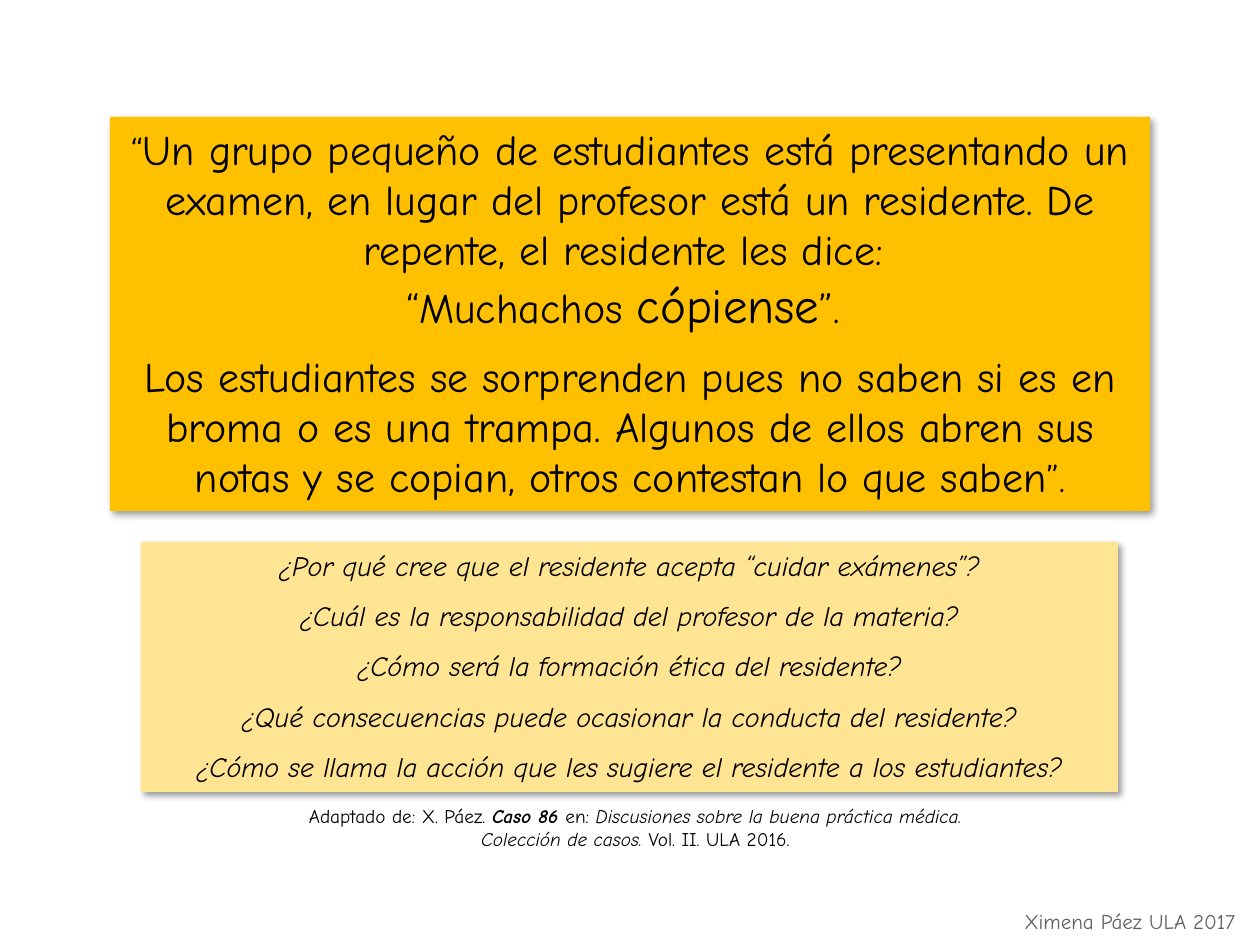
from lxml import etree
from pptx import Presentation
from pptx.dml.color import RGBColor
from pptx.enum.shapes import MSO_SHAPE
from pptx.enum.text import MSO_ANCHOR, MSO_AUTO_SIZE, PP_ALIGN
from pptx.oxml.ns import qn
from pptx.util import Emu, Pt

PX = 914400 // 126
RECT = MSO_SHAPE.RECTANGLE
CENTER = PP_ALIGN.CENTER
TOP = MSO_ANCHOR.TOP
GROW = MSO_AUTO_SIZE.SHAPE_TO_FIT_TEXT

BLACK = RGBColor(0x00, 0x00, 0x00)
GRAY = RGBColor(0x5F, 0x5F, 0x5F)
AMBER = RGBColor(0xFF, 0xC0, 0x00)
CREAM = RGBColor(0xFF, 0xE5, 0x93)

FONT = "Comic Neue"
GAP = 9.6  # points between separated paragraphs


class SlideBuilder:
    def __init__(self, slide):
        self.slide = slide

    def px(self, *lengths):
        return [Emu(n * PX) for n in lengths]

    def shadow(self, sp):
        sp.shadow.inherit = False
        effects = sp._element.spPr.find(qn("a:effectLst"))
        outer = etree.SubElement(effects, qn("a:outerShdw"), blurRad=str(Pt(4)),
                                 dist=str(Pt(3)), dir="2700000", algn="tl", rotWithShape="0")
        color = etree.SubElement(outer, qn("a:srgbClr"), val=str(BLACK))
        etree.SubElement(color, qn("a:alpha"), val="40000")

    def fill_text(self, sp, paragraphs, size, color=BLACK, wrap=True):
        """Each paragraph is (space before, [(text, format overrides), ...])."""
        tf = sp.text_frame
        tf.word_wrap = wrap
        tf.auto_size = GROW
        tf.vertical_anchor = TOP
        for i, (before, runs) in enumerate(paragraphs):
            p = tf.paragraphs[0] if i == 0 else tf.add_paragraph()
            p.alignment = CENTER
            p.space_before = Pt(before)
            for text, extra in runs:
                r = p.add_run()
                r.text = text
                r.font.color.rgb = color
                for key, value in {"name": FONT, "size": Pt(size), **extra}.items():
                    setattr(r.font, key, value)

    def panel(self, box, fill, paragraphs, size):
        sp = self.slide.shapes.add_shape(RECT, *self.px(*box))
        sp.fill.solid()
        sp.fill.fore_color.rgb = fill
        sp.line.fill.background()
        self.shadow(sp)
        self.fill_text(sp, paragraphs, size)

    def label(self, box, runs, size, **style):
        sp = self.slide.shapes.add_textbox(*self.px(*box))
        self.fill_text(sp, [(0, runs)], size, **style)


def main():
    prs = Presentation()
    prs.slide_width, prs.slide_height = Emu(9144000), Emu(6858000)
    s = SlideBuilder(prs.slides.add_slide(prs.slide_layouts[6]))
    quote, stress = {"size": Pt(22)}, {"size": Pt(28)}
    italic = {"italic": True}

    # Case story
    s.panel((110, 117, 1040, 394), AMBER, [
        (0, [("“", quote),
             ("Un grupo pequeño de estudiantes está presentando un examen, en lugar "
              "del profesor está un residente. De repente, el residente les dice: ", {})]),
        (0, [("“Muchachos ", {}), ("cópiense", stress), ("”. ", {})]),
        (GAP, [("Los estudiantes se sorprenden pues no saben si es en broma o es una "
                "trampa. Algunos de ellos abren sus notas y se copian, otros contestan "
                "lo que saben", {}), ("”.", quote)]),
    ], 24)

    # Author
    s.label((1004, 902, 252, 38), [("Ximena Páez ULA 2017", {})], 12,
            color=GRAY, wrap=False)

    # Source of the case
    s.label((267, 798, 737, 59), [
        ("Adaptado de: X. Páez. ", {}),
        ("Caso 86 ", {"bold": True, "italic": True}),
        ("en: ", {}),
        ("Discusiones sobre la buena práctica médica. Colección de casos. ", italic),
        ("Vol. II. ULA 2016.", {}),
    ], 11)

    # Questions for discussion
    questions = [
        "¿Por qué cree que el residente acepta “cuidar exámenes”?",
        "¿Cuál es la responsabilidad del profesor de la materia?",
        "¿Cómo será la formación ética del residente?",
        "¿Qué consecuencias puede ocasionar la conducta del residente?",
        "¿Cómo se llama la acción que les sugiere el residente a los estudiantes?",
    ]
    s.panel((141, 542, 977, 250), CREAM,
            [(GAP if i else 0, [(q, italic)]) for i, q in enumerate(questions)], 16)

    prs.save("out.pptx")


if __name__ == "__main__":
    main()
